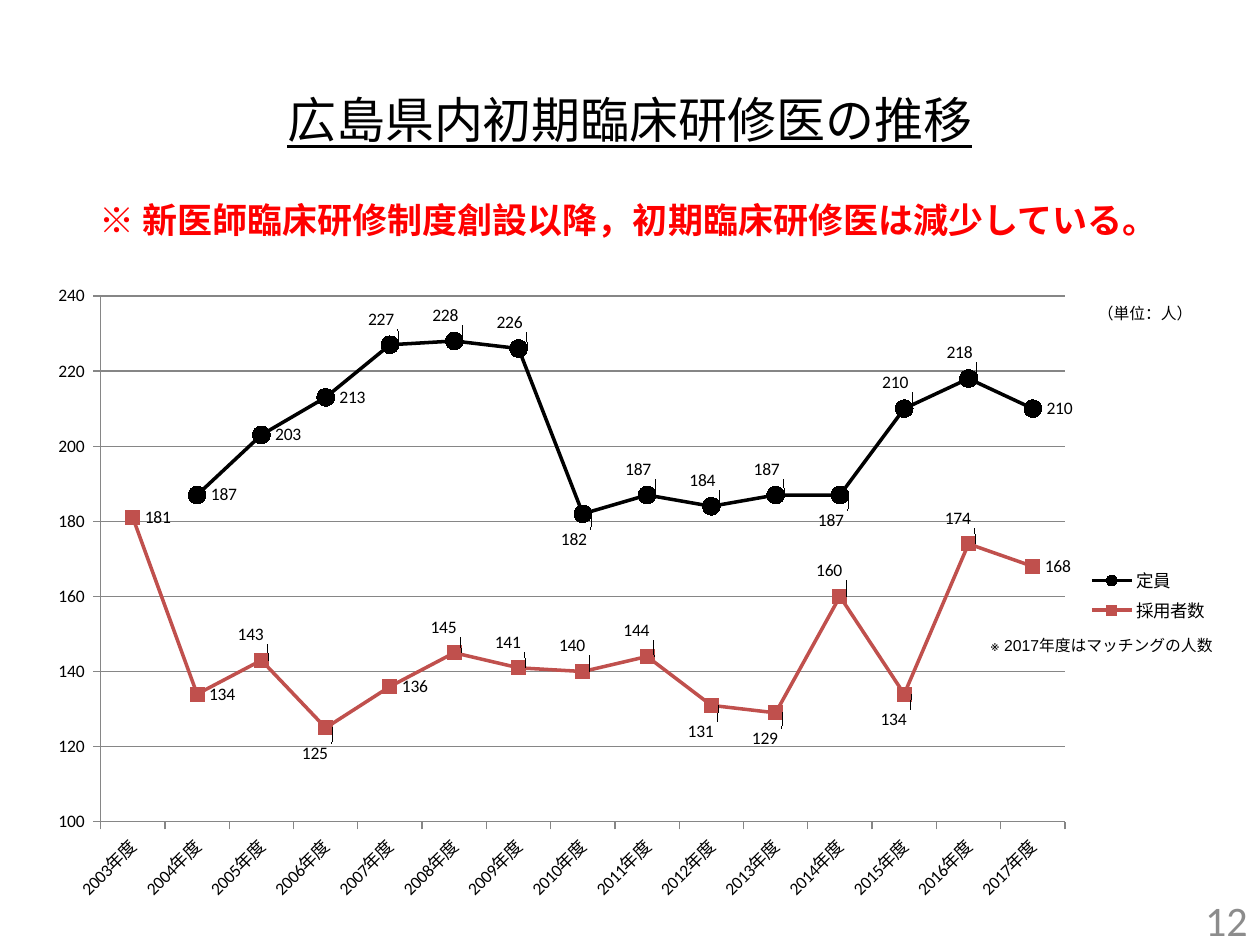
"""Builds the slide on the number of first-stage medical residents in Hiroshima."""
import pptx
import pptx.chart.data
import pptx.dml.color
import pptx.enum.chart
import pptx.enum.shapes
import pptx.enum.text
import pptx.oxml
import pptx.oxml.ns
import pptx.util

Cm, Pt = pptx.util.Cm, pptx.util.Pt
ALIGN = pptx.enum.text.PP_ALIGN
MARKER = pptx.enum.chart.XL_MARKER_STYLE
NUMBER_FORMAT = "#,##0_ "
YEARS = [f"{year}年度" for year in range(2003, 2018)]
CAPACITY = [None, 187, 203, 213, 227, 228, 226, 182, 187, 184, 187, 187, 210, 218, 210]
HIRED = [181, 134, 143, 125, 136, 145, 141, 140, 144, 131, 129, 160, 134, 174, 168]


def rgb(value):
    return pptx.dml.color.RGBColor.from_string(value)


def write(frame, text, size, color="000000", font="Calibri", align=ALIGN.CENTER,
          bold=False, underline=False):
    frame.word_wrap = True
    frame.vertical_anchor = pptx.enum.text.MSO_ANCHOR.MIDDLE
    paragraph = frame.paragraphs[0]
    paragraph.alignment = align
    run = paragraph.add_run()
    run.text = text
    run.font.size, run.font.name = Pt(size), font
    run.font.bold, run.font.underline = bold, underline
    run.font.color.rgb = rgb(color)


def manual_layout(x, y, width=None, height=None, inner=False):
    values = []
    if inner:
        values.append(("layoutTarget", "inner"))
    if width:
        values += [("xMode", "edge"), ("yMode", "edge")]
    values += [("x", x), ("y", y)]
    if width:
        values += [("w", width), ("h", height)]
    body = "".join(f'<c:{name} val="{value}"/>' for name, value in values)
    return pptx.oxml.parse_xml(
        f'<c:layout {pptx.oxml.ns.nsdecls("c")}><c:manualLayout>{body}</c:manualLayout></c:layout>')


def place(element, layout, index=0):
    for old in element.findall(pptx.oxml.ns.qn("c:layout")):
        element.remove(old)
    element.insert(index, layout)


class Deck:
    """Holds the style and the current slide."""

    grid_color = "868686"
    chart_size = 10

    def __init__(self):
        self.presentation = pptx.Presentation()
        self.presentation.slide_width, self.presentation.slide_height = Cm(25.4), Cm(19.05)
        self.slide = self.presentation.slides.add_slide(self.presentation.slide_layouts[6])

    def text(self, box, text, size, **style):
        label = self.slide.shapes.add_textbox(*map(Cm, box))
        write(label.text_frame, text, size, **style)

    def banner(self, box, text, size, **style):
        banner = self.slide.shapes.add_shape(
            pptx.enum.shapes.MSO_SHAPE.RECTANGLE, *map(Cm, box))
        banner.shadow.inherit = False
        banner.fill.solid()
        banner.fill.fore_color.rgb = rgb("FFFFFF")
        banner.line.fill.background()
        write(banner.text_frame, text, size, **style)

    def line_chart(self, box, categories, series):
        data = pptx.chart.data.CategoryChartData(number_format=NUMBER_FORMAT)
        data.categories = categories
        for name, values in series:
            data.add_series(name, values)
        chart = self.slide.shapes.add_chart(
            pptx.enum.chart.XL_CHART_TYPE.LINE_MARKERS, *map(Cm, box), data).chart
        chart.has_title = False
        chart.font.size, chart.font.name = Pt(self.chart_size), "Calibri"
        chart.font.color.rgb = rgb("000000")
        chart.has_legend = True
        chart.legend.position = pptx.enum.chart.XL_LEGEND_POSITION.RIGHT
        chart.legend.include_in_layout = False
        return chart

    def axes(self, chart, low, high, step):
        years, people = chart.category_axis, chart.value_axis
        people.minimum_scale, people.maximum_scale, people.major_unit = low, high, step
        people.tick_labels.number_format = NUMBER_FORMAT
        people.tick_labels.number_format_is_linked = False
        people.has_major_gridlines = True
        for line in (people.major_gridlines.format.line, people.format.line, years.format.line):
            line.color.rgb, line.width = rgb(self.grid_color), Pt(0.75)
        for axis in (years, people):
            axis.major_tick_mark = pptx.enum.chart.XL_TICK_MARK.OUTSIDE
            axis.tick_labels.font.size = Pt(self.chart_size)
        years_text = years._element.find(pptx.oxml.ns.qn("c:txPr"))
        years_text.find(pptx.oxml.ns.qn("a:bodyPr")).set("rot", "-2700000")

    def series(self, series, color, marker, marker_size, above, below):
        series.smooth = False
        series.format.line.color.rgb, series.format.line.width = rgb(color), Pt(2)
        series.marker.style, series.marker.size = marker, marker_size
        series.marker.format.fill.solid()
        series.marker.format.fill.fore_color.rgb = rgb(color)
        series.marker.format.line.color.rgb = rgb(color)
        right = pptx.enum.chart.XL_LABEL_POSITION.RIGHT
        labels = series.data_labels
        labels.show_value, labels.position = True, right
        labels.number_format, labels.number_format_is_linked = NUMBER_FORMAT, False
        for indexes, shift in ((above, -0.04), (below, 0.04)):
            for index in indexes:
                series.points[index].data_label.position = right
                label = labels._element.xpath(f'c:dLbl[c:idx/@val="{index}"]')[0]
                place(label, manual_layout(-0.03, shift), 1)


def main():
    deck = Deck()
    chart = deck.line_chart((0.71, 5.54, 24, 12.93), YEARS,
                            [("定員", CAPACITY), ("採用者数", HIRED)])
    deck.axes(chart, 100, 240, 20)
    capacity, hired = chart.plots[0].series
    deck.series(capacity, "000000", MARKER.CIRCLE, 10,
                above=(4, 5, 6, 8, 9, 10, 12, 13), below=(7, 11))
    deck.series(hired, "C0504D", MARKER.SQUARE, 8,
                above=(2, 5, 6, 7, 8, 11, 13), below=(3, 9, 10, 12))
    plot_area = chart._chartSpace.chart.plotArea
    place(plot_area, manual_layout(0.055, 0.033, 0.81, 0.82, inner=True))
    place(chart.legend._element, manual_layout(0.88, 0.45, 0.11, 0.1), 1)

    deck.text((19.48, 18.03, 5.92, 1.02), "12", 24, color="8C8C8C", align=ALIGN.RIGHT)
    deck.text((0, 3.53, 25.35, 1.8), "※ 新医師臨床研修制度創設以降，初期臨床研修医は減少している。", 20,
              color="FF0000", font="Noto Sans CJK JP", bold=True)
    deck.text((21.69, 5.92, 2.79, 0.79), "（単位：人）", 9, font="Arial")
    deck.text((19.1, 12.62, 5.59, 0.79), "※ 2017年度はマッチングの人数", 9,
              font="Arial", align=ALIGN.RIGHT)
    deck.banner((0.3, 1.3, 24.79, 2.21), "広島県内初期臨床研修医の推移", 28, underline=True)
    deck.presentation.save("out.pptx")


if __name__ == "__main__":
    main()
